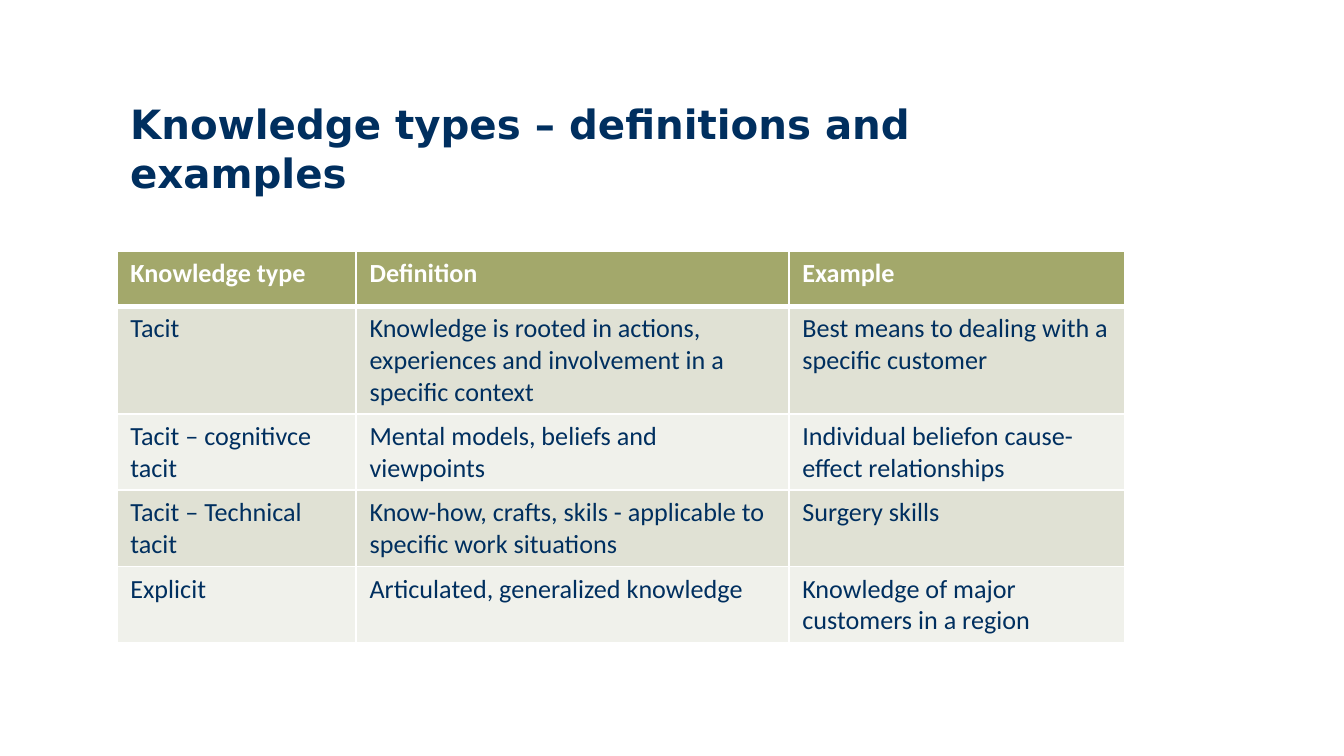
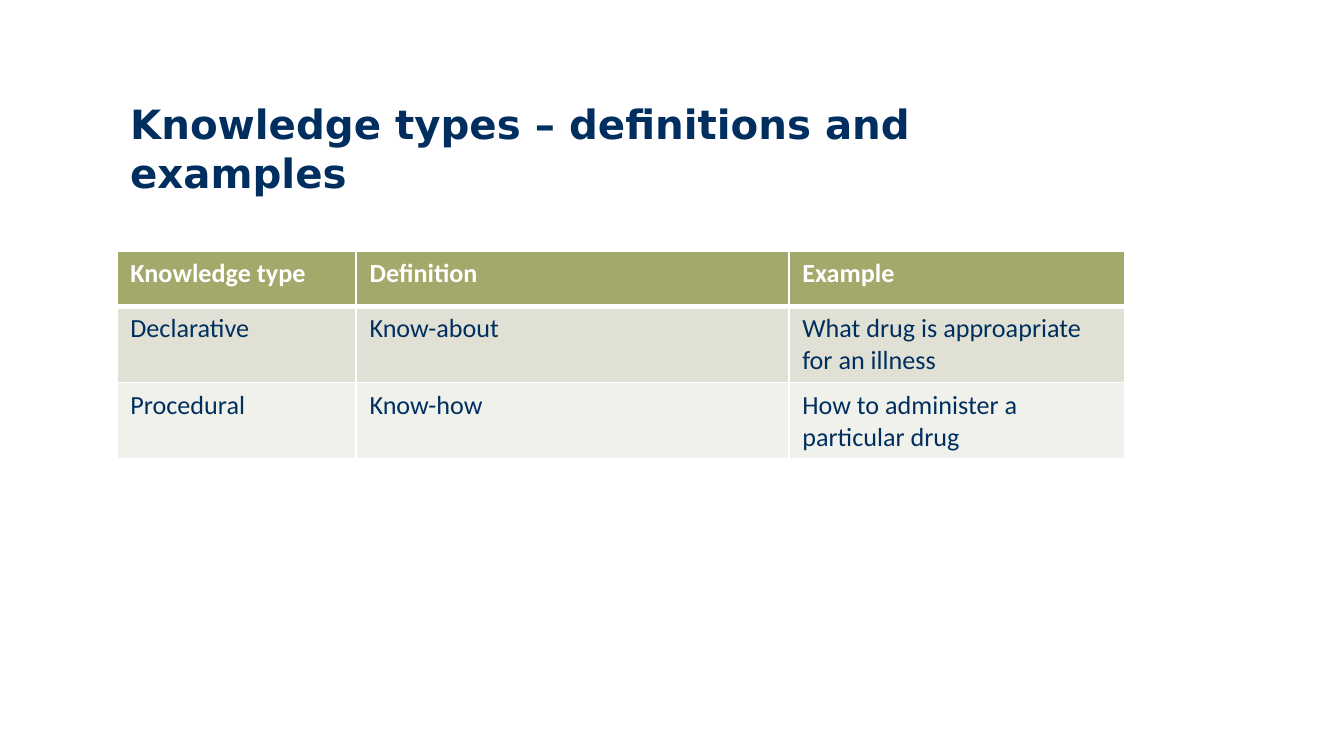
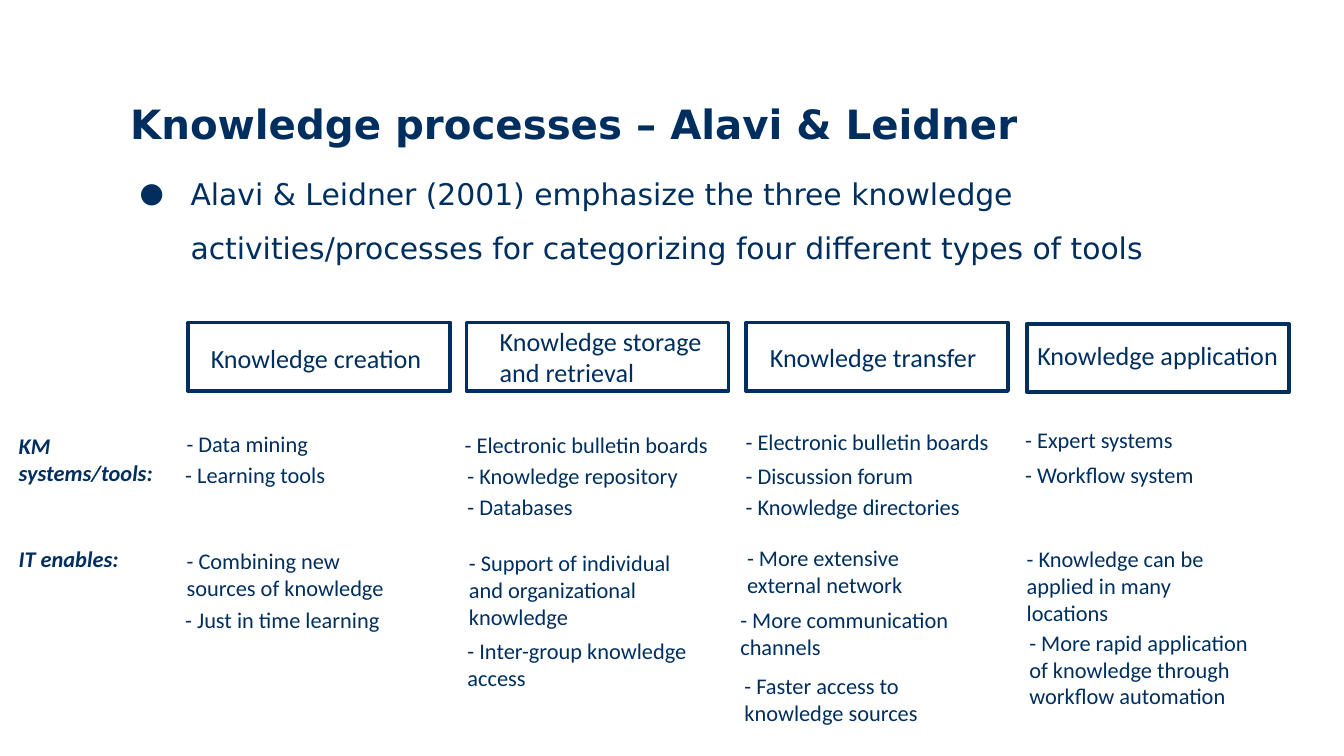
import pptx
import pptx.dml.color
import pptx.enum.shapes
import pptx.enum.text
import pptx.util
from lxml import etree
from pptx.oxml.ns import qn

Inches = pptx.util.Inches
RGBColor = pptx.dml.color.RGBColor

NAVY = RGBColor(0x00, 0x2F, 0x5F)
OLIVE = RGBColor(0xA3, 0xA8, 0x6B)
BAND_DARK = RGBColor(0xE0, 0xE1, 0xD4)
BAND_LIGHT = RGBColor(0xF0, 0xF1, 0xEB)
WHITE = RGBColor(0xFF, 0xFF, 0xFF)

HEADING_FONT = "DejaVu Sans"
TEXT_FONT = "Calibri"

COLUMN_WIDTHS = (1.78, 3.22, 2.5)
ROW_HEIGHT = 0.41
TYPES_TITLE = "Knowledge types – definitions and examples"
TYPES_HEADER = ("Knowledge type", "Definition", "Example")

TACIT_AND_EXPLICIT = [
    ("Tacit",
     "Knowledge is rooted in actions, experiences and involvement in a specific context",
     "Best means to dealing with a specific customer"),
    ("Tacit – cognitivce tacit",
     "Mental models, beliefs and viewpoints",
     "Individual beliefon cause-effect relationships"),
    ("Tacit – Technical tacit",
     "Know-how, crafts, skils - applicable to specific work situations",
     "Surgery skills"),
    ("Explicit",
     "Articulated, generalized knowledge",
     "Knowledge of major customers in a region"),
]

DECLARATIVE_AND_PROCEDURAL = [
    ("Declarative", "Know-about", "What drug is approapriate for an illness"),
    ("Procedural", "Know-how", "How to administer a particular drug"),
]

# Frame left and top, then label left, top and height
PROCESSES = [
    (1.4, 2.4, 1.47, 2.5, 0.34, "Knowledge creation"),
    (3.47, 2.4, 3.62, 2.37, 0.57, "Knowledge storage and retrieval"),
    (5.55, 2.4, 5.63, 2.49, 0.34, "Knowledge transfer"),
    (7.64, 2.41, 7.62, 2.48, 0.34, "Knowledge application"),
]

ROW_LABELS = [
    (0.04, 3.17, 1.37, 2, "KM systems/tools:"),
    (0.04, 4.01, 1.37, 1, "IT enables:"),
]

# Left, top, width, number of lines
TOOLS = [
    (1.29, 3.15, 1.14, 1, "Data mining"),
    (1.28, 3.38, 1.28, 1, "Learning tools"),
    (3.36, 3.16, 2.04, 1, "Electronic bulletin boards"),
    (3.38, 3.39, 1.81, 1, "Knowledge repository"),
    (3.38, 3.62, 1.02, 1, "Databases"),
    (5.45, 3.14, 2.1, 1, "Electronic bulletin boards"),
    (5.45, 3.39, 2.04, 1, "Discussion forum"),
    (5.45, 3.62, 1.84, 1, "Knowledge directories"),
    (7.53, 3.12, 1.34, 1, "Expert systems"),
    (7.53, 3.38, 1.5, 1, "Workflow system"),
]

BENEFIT_WIDTH = 1.89
BENEFITS = [
    (1.29, 4.02, 2, "Combining new sources of knowledge"),
    (1.28, 4.46, 1, "Just in time learning"),
    (3.39, 4.04, 3, "Support of individual and organizational knowledge"),
    (3.38, 4.69, 2, "Inter-group knowledge access"),
    (5.46, 4, 2, "More extensive external network"),
    (5.41, 4.46, 2, "More communication channels"),
    (5.44, 4.95, 2, "Faster access to knowledge sources"),
    (7.54, 4.01, 3, "Knowledge can be applied in many locations"),
    (7.56, 4.63, 3, "More rapid application of knowledge through workflow automation"),
]


def style(paragraph, size, font=TEXT_FONT, color=NAVY, bold=False, italic=False):
    for run in paragraph.runs:
        run.font.size = pptx.util.Pt(size)
        run.font.name = font
        run.font.color.rgb = color
        run.font.bold = bold
        run.font.italic = italic


def add_text(slide, left, top, width, height, text, size, grow=True, **look):
    """Add a wrapping text box and return its paragraph."""
    box = slide.shapes.add_textbox(
        Inches(left), Inches(top), Inches(width), Inches(height))
    frame = box.text_frame
    frame.word_wrap = True
    if grow:
        frame.auto_size = pptx.enum.text.MSO_AUTO_SIZE.SHAPE_TO_FIT_TEXT
    frame.text = text
    style(frame.paragraphs[0], size, **look)
    return frame.paragraphs[0]


def add_note(slide, left, top, width, lines, text, **look):
    add_text(slide, left, top, width, 0.1 + 0.2 * lines, text, 12, **look)


def add_titled_slide(deck, title):
    slide = deck.slides.add_slide(deck.slide_layouts[6])
    add_text(slide, 0.87, 0.69, 7.49, 0.65, title, 21.6,
             grow=False, font=HEADING_FONT, bold=True)
    return slide


def add_bullet(slide, text):
    statement = add_text(slide, 0.94, 1.12, 8.68, 0.97, text, 16,
                         grow=False, font=HEADING_FONT)
    statement.line_spacing = pptx.util.Pt(29)
    properties = statement._p.get_or_add_pPr()
    properties.set("marL", str(Inches(0.38)))
    properties.set("indent", str(-Inches(0.38)))
    etree.SubElement(properties, qn("a:buSzPct"), val="93000")
    etree.SubElement(properties, qn("a:buFont"), typeface=HEADING_FONT)
    etree.SubElement(properties, qn("a:buChar"), char="●")


def set_borders(cell, top, bottom):
    """Draw white borders, 1 pt at the sides and the given points above and below."""
    properties = cell._tc.get_or_add_tcPr()
    for tag, points in (("lnL", 1), ("lnR", 1), ("lnT", top), ("lnB", bottom)):
        line = etree.SubElement(properties, qn("a:" + tag), w=str(pptx.util.Pt(points)))
        fill = etree.SubElement(line, qn("a:solidFill"))
        etree.SubElement(fill, qn("a:srgbClr"), val=str(WHITE))


def add_types_table(slide, entries):
    rows = [TYPES_HEADER] + entries
    table = slide.shapes.add_table(
        len(rows), len(COLUMN_WIDTHS), Inches(0.87), Inches(1.87),
        Inches(sum(COLUMN_WIDTHS)), Inches(ROW_HEIGHT * len(rows))).table
    for column, width in zip(table.columns, COLUMN_WIDTHS):
        column.width = Inches(width)
    for r, texts in enumerate(rows):
        table.rows[r].height = Inches(ROW_HEIGHT)
        header = r == 0
        band = OLIVE if header else (BAND_LIGHT, BAND_DARK)[r % 2]
        for c, text in enumerate(texts):
            cell = table.cell(r, c)
            set_borders(cell, top=3 if r == 1 else 1, bottom=3 if header else 1)
            cell.fill.solid()
            cell.fill.fore_color.rgb = band
            cell.text = text
            style(cell.text_frame.paragraphs[0], 14,
                  color=WHITE if header else NAVY, bold=header)


def add_process(slide, left, top, label_left, label_top, label_height, name):
    frame = slide.shapes.add_shape(
        pptx.enum.shapes.MSO_SHAPE.RECTANGLE,
        Inches(left), Inches(top), Inches(1.95), Inches(0.51))
    frame.shadow.inherit = False
    frame.fill.solid()
    frame.fill.fore_color.rgb = WHITE
    frame.line.color.rgb = NAVY
    frame.line.width = pptx.util.Pt(2)
    add_text(slide, label_left, label_top, 2, label_height, name, 14)


def add_processes_slide(deck):
    slide = add_titled_slide(deck, "Knowledge processes – Alavi & Leidner")
    add_bullet(slide, "Alavi & Leidner (2001) emphasize the three knowledge "
                      "activities/processes for categorizing four different types of tools")
    for process in PROCESSES:
        add_process(slide, *process)
    for label in ROW_LABELS:
        add_note(slide, *label, bold=True, italic=True)
    for left, top, width, lines, tool in TOOLS:
        add_note(slide, left, top, width, lines, "- " + tool)
    for left, top, lines, benefit in BENEFITS:
        add_note(slide, left, top, BENEFIT_WIDTH, lines, "- " + benefit)


def main():
    deck = pptx.Presentation()
    deck.slide_width = Inches(10)
    deck.slide_height = deck.slide_width * 9 // 16
    for entries in (TACIT_AND_EXPLICIT, DECLARATIVE_AND_PROCEDURAL):
        add_types_table(add_titled_slide(deck, TYPES_TITLE), entries)
    add_processes_slide(deck)
    deck.save("out.pptx")


if __name__ == "__main__":
    main()
